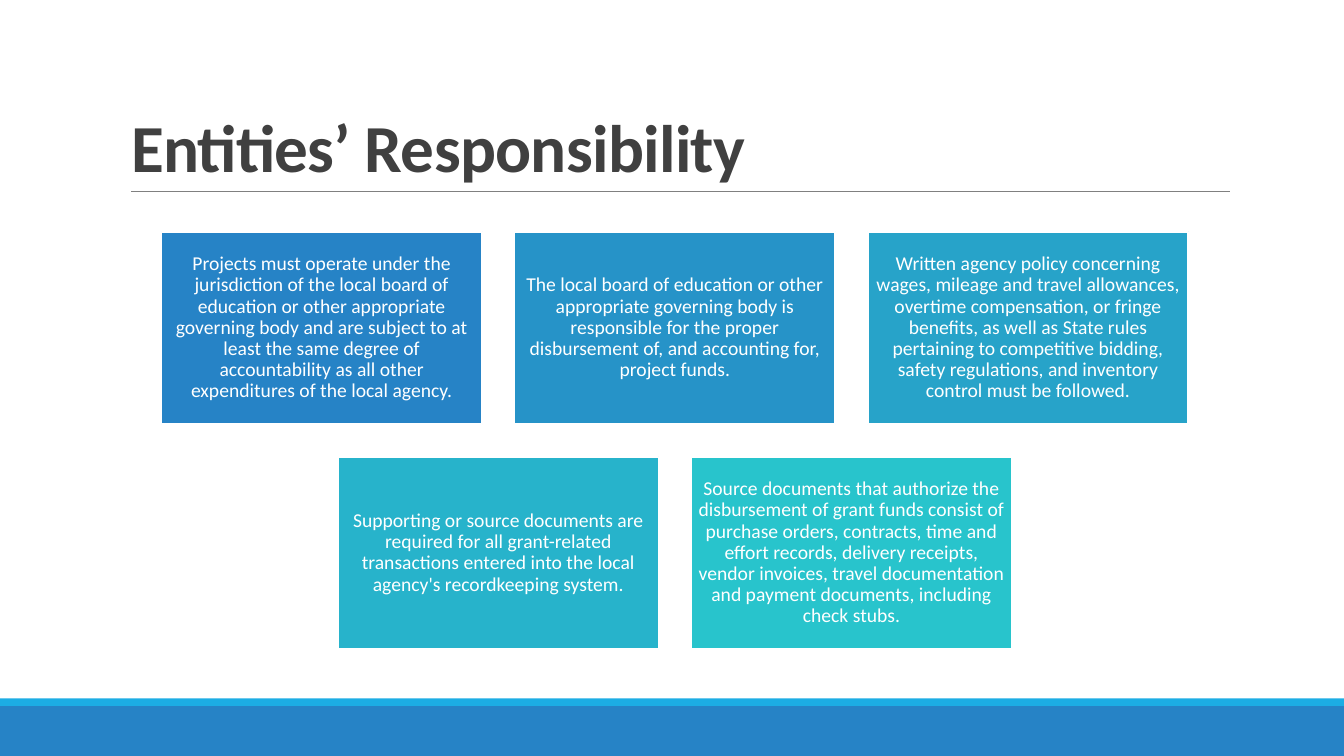
from lxml import etree
from pptx import Presentation
from pptx.dml.color import RGBColor
from pptx.enum import shapes, text
from pptx.oxml.ns import qn
from pptx.util import Cm, Pt

FONT = "Calibri"
WHITE = RGBColor(0xFF, 0xFF, 0xFF)
DARK = RGBColor(0x40, 0x40, 0x40)
GRAY = RGBColor(0x80, 0x80, 0x80)
BLUE = RGBColor(0x26, 0x83, 0xC6)
SKY = RGBColor(0x1C, 0xAD, 0xE4)

CARDS = [
    (BLUE, "Projects must operate under the jurisdiction of the local board of "
     "education or other appropriate governing body and are subject to at least "
     "the same degree of accountability as all other expenditures of the local agency."),
    (RGBColor(0x26, 0x93, 0xC8), "The local board of education or other appropriate "
     "governing body is responsible for the proper disbursement of, and accounting "
     "for, project funds."),
    (RGBColor(0x27, 0xA3, 0xC9), "Written agency policy concerning wages, mileage and "
     "travel allowances, overtime compensation, or fringe benefits, as well as State "
     "rules pertaining to competitive bidding, safety regulations, and inventory "
     "control must be followed."),
    (RGBColor(0x27, 0xB3, 0xCB), "Supporting or source documents are required for all "
     "grant-related transactions entered into the local agency's recordkeeping system."),
    (RGBColor(0x28, 0xC4, 0xCC), "Source documents that authorize the disbursement of "
     "grant funds consist of purchase orders, contracts, time and effort records, "
     "delivery receipts, vendor invoices, travel documentation and payment documents, "
     "including check stubs."),
]
COLUMNS = 3
CARD_WIDTH, CARD_HEIGHT = 8.08, 4.85
GAP = 0.82
CARDS_LEFT, CARDS_TOP = 4.07, 5.84


def add_box(left, top, width, height, color):
    box = slide.shapes.add_shape(
        shapes.MSO_SHAPE.RECTANGLE, Cm(left), Cm(top), Cm(width), Cm(height))
    box.shadow.inherit = False
    box.fill.solid()
    box.fill.fore_color.rgb = color
    box.line.fill.background()
    return box


def add_span(para, wording, size, color):
    span = para.add_run()
    span.text = wording
    span.font.name = FONT
    span.font.size = Pt(size)
    span.font.color.rgb = color
    return span


deck = Presentation()
deck.slide_width, deck.slide_height = Cm(33.87), Cm(19.05)
slide = deck.slides.add_slide(deck.slide_layouts[5])

# Footer bands and title rule
add_box(0, 17.78, 33.87, 1.27, BLUE)
add_box(0, 17.6, 33.87, 0.19, SKY)
rule = slide.shapes.add_connector(
    shapes.MSO_CONNECTOR.STRAIGHT, Cm(3.31), Cm(4.83), Cm(31), Cm(4.83))
rule.line.color.rgb = GRAY
rule.line.width = Pt(0.5)
etree.SubElement(rule._element.spPr, qn("a:effectLst"))

# Title
title = slide.shapes.title
title.left, title.top, title.width, title.height = Cm(3.05), Cm(0.8), Cm(27.94), Cm(4.03)
frame = title.text_frame
frame.word_wrap = True
frame.auto_size = text.MSO_AUTO_SIZE.NONE
frame.vertical_anchor = text.MSO_ANCHOR.BOTTOM
para = frame.paragraphs[0]
para.alignment = text.PP_ALIGN.LEFT
para.line_spacing = 0.85
span = add_span(para, "Entities’ Responsibility", 48, DARK)
span.font.bold = True
span._r.get_or_add_rPr().set("spc", "-50")

# Cards, with a shorter last row centred under the first
for index, (color, wording) in enumerate(CARDS):
    row, column = divmod(index, COLUMNS)
    row_count = min(COLUMNS, len(CARDS) - row * COLUMNS)
    shift = column + (COLUMNS - row_count) / 2
    box = add_box(CARDS_LEFT + shift * (CARD_WIDTH + GAP),
                  CARDS_TOP + row * (CARD_HEIGHT + GAP),
                  CARD_WIDTH, CARD_HEIGHT, color)
    box.line.color.rgb = WHITE
    box.line.width = Pt(1.25)
    frame = box.text_frame
    frame.word_wrap = True
    frame.vertical_anchor = text.MSO_ANCHOR.MIDDLE
    frame.margin_left = frame.margin_right = Cm(0.15)
    frame.margin_top = frame.margin_bottom = Cm(0.15)
    para = frame.paragraphs[0]
    para.alignment = text.PP_ALIGN.CENTER
    para.line_spacing = 0.9
    add_span(para, wording, 14, WHITE)

deck.save("out.pptx")
